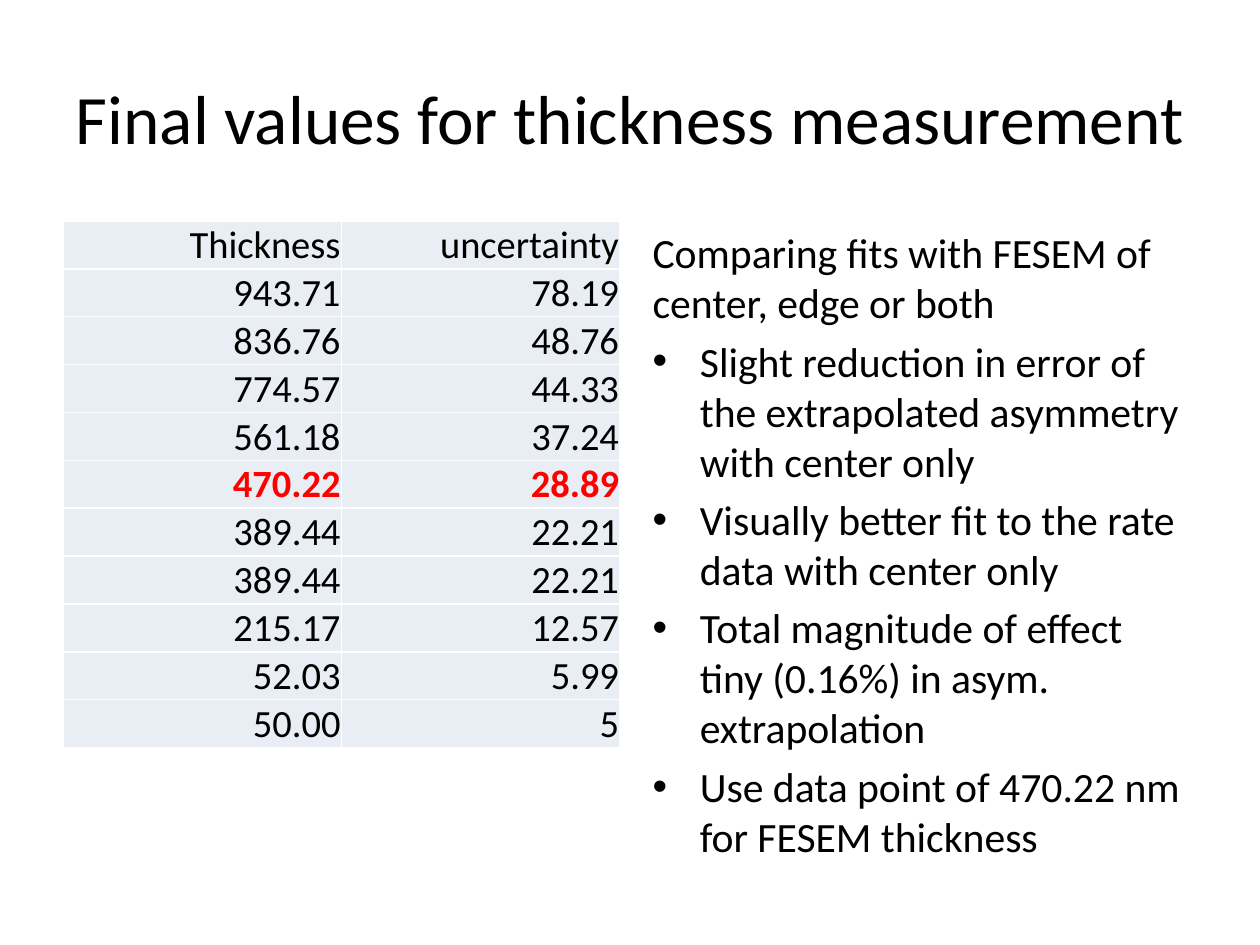
"""Build the slide of final thickness values beside notes on the fits."""
from dataclasses import dataclass

from lxml import etree
from pptx import Presentation
from pptx.dml.color import RGBColor
from pptx.enum.text import MSO_ANCHOR, MSO_AUTO_SIZE, PP_ALIGN
from pptx.oxml.ns import qn
from pptx.util import Emu, Pt

MIDDLE, BOTTOM, TOP = MSO_ANCHOR.MIDDLE, MSO_ANCHOR.BOTTOM, MSO_ANCHOR.TOP
CENTER, RIGHT, LEFT = PP_ALIGN.CENTER, PP_ALIGN.RIGHT, PP_ALIGN.LEFT
NO_FIT = MSO_AUTO_SIZE.NONE

TITLE = "Final values for thickness measurement"
ROWS = [
    ("Thickness", "uncertainty"),
    ("943.71", "78.19"),
    ("836.76", "48.76"),
    ("774.57", "44.33"),
    ("561.18", "37.24"),
    ("470.22", "28.89"),
    ("389.44", "22.21"),
    ("389.44", "22.21"),
    ("215.17", "12.57"),
    ("52.03", "5.99"),
    ("50.00", "5"),
]
CHOSEN = "470.22"
LEAD = "Comparing fits with FESEM of center, edge or both"
POINTS = [
    "Slight reduction in error of the extrapolated asymmetry with center only",
    "Visually better fit to the rate data with center only",
    "Total magnitude of effect tiny (0.16%) in asym. extrapolation",
    "Use data point of 470.22 nm for FESEM thickness",
]

SLIDE_W, SLIDE_H = 1260, 945
MARGIN, TOP_Y, COL_W, ROW_H = 63, 221, 557, 47
TITLE_BOX = (MARGIN, 38, SLIDE_W - 2 * MARGIN, 158)
BODY_BOX = (SLIDE_W - MARGIN - COL_W, TOP_Y, COL_W, 624)
TABLE_BOX = (MARGIN, TOP_Y, COL_W, ROW_H * len(ROWS))


@dataclass(frozen=True)
class Theme:
    """Fonts, sizes and colours of the slide."""
    font: str = "Calibri"
    title: float = 39.6
    body: float = 23.8
    cell: float = 22
    ink: str = "000000"
    accent: str = "FF0000"
    cell_fill: str = "E9EDF4"
    border: str = "FFFFFF"


THEME = Theme()


def px(n):
    """Turn slide pixels into EMU."""
    return Emu(round(n * 914400 / 126))


def apply(obj, values):
    """Set each named attribute on an object."""
    for name, value in values.items():
        setattr(obj, name, value)


def write(p, text, size, align, color=THEME.ink, bold=False):
    """Put one formatted run in a paragraph."""
    p.alignment = align
    r = p.add_run()
    r.text = text
    apply(r.font, {"name": THEME.font, "size": Pt(size), "bold": bold})
    r.font.color.rgb = RGBColor.from_string(color)


def place(sp, box, anchor):
    """Move a placeholder and fix its text frame."""
    apply(sp, dict(zip(("left", "top", "width", "height"), map(px, box))))
    tf = sp.text_frame
    apply(tf, {"word_wrap": True, "auto_size": NO_FIT, "vertical_anchor": anchor})
    return tf


def add_borders(cell):
    """Draw a one-point line on each side of a cell."""
    tcPr = cell._tc.get_or_add_tcPr()
    for side in ("a:lnL", "a:lnR", "a:lnT", "a:lnB"):
        ln = etree.SubElement(tcPr, qn(side), w=str(Pt(1)))
        fill = etree.SubElement(ln, qn("a:solidFill"))
        etree.SubElement(fill, qn("a:srgbClr"), val=THEME.border)


def add_values(s):
    """Add the table of thickness and uncertainty."""
    table = s.shapes.add_table(len(ROWS), len(ROWS[0]), *map(px, TABLE_BOX)).table
    apply(table, {"first_row": False, "horz_banding": False})
    for i, row in enumerate(ROWS):
        chosen = row[0] == CHOSEN
        color = THEME.accent if chosen else THEME.ink
        for j, text in enumerate(row):
            cell = table.cell(i, j)
            apply(cell, {"margin_left": px(1), "margin_right": px(1),
                         "margin_top": px(1), "margin_bottom": 0,
                         "vertical_anchor": BOTTOM})
            add_borders(cell)
            cell.fill.solid()
            cell.fill.fore_color.rgb = RGBColor.from_string(THEME.cell_fill)
            write(cell.text_frame.paragraphs[0], text, THEME.cell, RIGHT, color, chosen)


def add_notes(tf):
    """Write the lead line and its bulleted points."""
    lead = tf.paragraphs[0]
    write(lead, LEAD, THEME.body, LEFT)
    pPr = lead._p.get_or_add_pPr()
    pPr.set("marL", "0")
    pPr.set("indent", "0")
    etree.SubElement(pPr, qn("a:buNone"))
    for text in POINTS:
        write(tf.add_paragraph(), text, THEME.body, LEFT)


def main():
    """Build and save the slide."""
    prs = Presentation()
    apply(prs, {"slide_width": px(SLIDE_W), "slide_height": px(SLIDE_H)})
    s = prs.slides.add_slide(prs.slide_layouts[3])
    title, spare, body = s.placeholders
    spare.element.getparent().remove(spare.element)

    tf = place(title, TITLE_BOX, MIDDLE)
    apply(tf, {"margin_left": 0, "margin_right": 0})
    write(tf.paragraphs[0], TITLE, THEME.title, CENTER)
    add_values(s)
    add_notes(place(body, BODY_BOX, TOP))
    prs.save("out.pptx")


if __name__ == "__main__":
    main()
